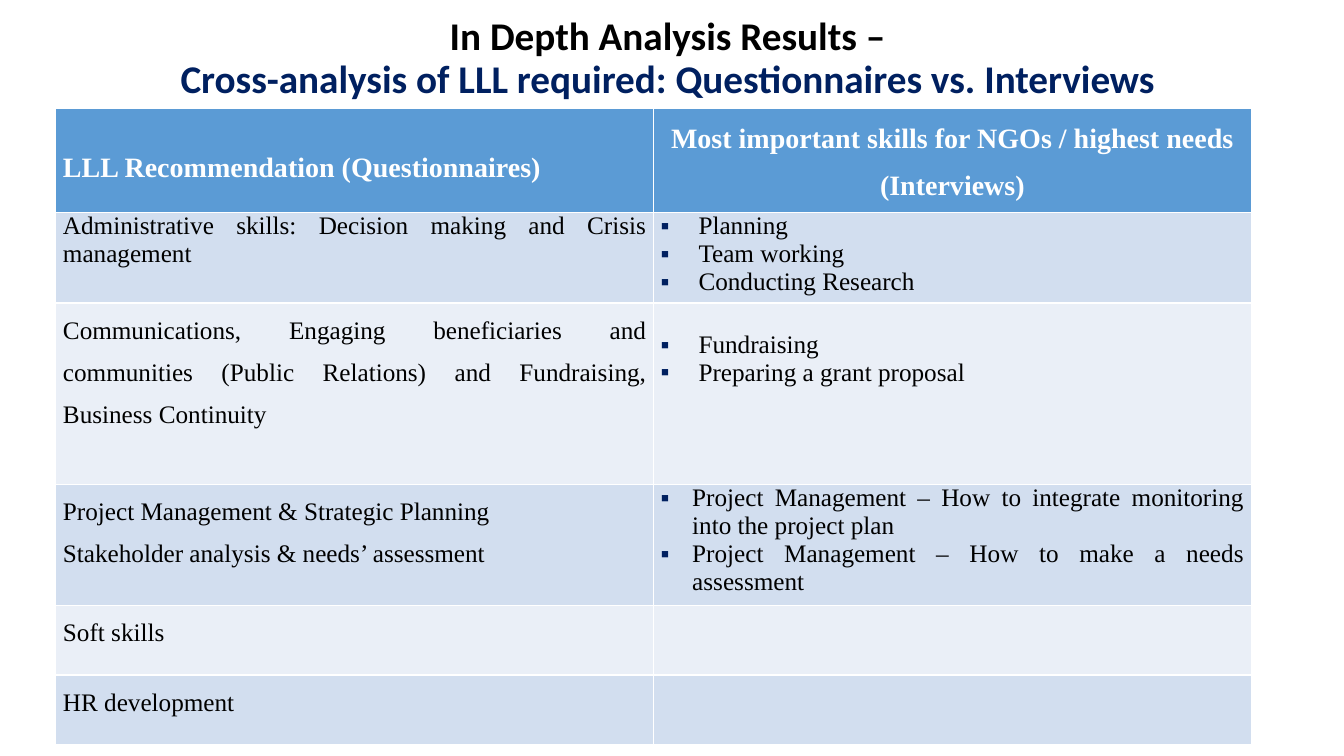
from dataclasses import dataclass

import pptx
import pptx.dml.color
import pptx.enum.text
import pptx.oxml.ns
import pptx.util
from lxml import etree

RGBColor = pptx.dml.color.RGBColor
Align = pptx.enum.text.PP_ALIGN
Anchor = pptx.enum.text.MSO_ANCHOR

BLACK = RGBColor(0x00, 0x00, 0x00)
WHITE = RGBColor(0xFF, 0xFF, 0xFF)
NAVY = RGBColor(0x00, 0x20, 0x60)
HEADER_BLUE = RGBColor(0x5B, 0x9B, 0xD5)
BANDS = (RGBColor(0xD2, 0xDE, 0xEF), RGBColor(0xEA, 0xEF, 0xF7))

# The slide is a grid of 160 columns by 90 rows, twelve to the inch
UNIT = pptx.util.Inches(1) / 12
SLIDE_COLUMNS, SLIDE_ROWS = 160, 90

TITLE_FORMAT = {"name": "Calibri", "size": pptx.util.Pt(28), "bold": True}
HEADER_FORMAT = {"name": "Times New Roman", "size": pptx.util.Pt(20), "bold": True}
BODY_FORMAT = {"name": "Times New Roman", "size": pptx.util.Pt(18), "bold": False}


def grid(units: float) -> int:
    return pptx.util.Emu(round(units * UNIT))


@dataclass(frozen=True)
class CellText:
    lines: tuple[str, ...] = ()
    line_spacing: float = 1.0
    alignment: Align = Align.JUSTIFY
    anchor: Anchor = Anchor.TOP
    bullet_indent: float = 0
    top_margin: float = 0
    space_after: float = 0


@dataclass(frozen=True)
class TableRow:
    height: float
    needs: CellText
    skills: CellText = CellText()


COLUMN_WIDTH = 71.16
TABLE_ROWS = (
    TableRow(12.36,
             CellText(("LLL Recommendation (Questionnaires)",), 1.5, anchor=Anchor.MIDDLE),
             CellText(("Most important skills for NGOs / highest needs (Interviews)",),
                      1.5, Align.CENTER)),
    TableRow(10.8,
             CellText(("Administrative skills: Decision making and Crisis management",)),
             CellText(("Planning", "Team working", "Conducting Research"),
                      bullet_indent=4.5, space_after=12)),
    TableRow(21.6,
             CellText(("Communications, Engaging beneficiaries and communities "
                       "(Public Relations) and Fundraising, Business Continuity",), 1.5),
             CellText(("Fundraising", "Preparing a grant proposal"),
                      bullet_indent=4.5, top_margin=3.3)),
    TableRow(14.4,
             CellText(("Project Management & Strategic Planning",
                       "Stakeholder analysis & needs’ assessment"), 1.5),
             CellText(("Project Management – How to integrate monitoring into the project plan",
                       "Project Management – How to make a needs assessment"),
                      bullet_indent=3.75)),
    TableRow(8.28, CellText(("Soft skills",), 1.5)),
    TableRow(8.28, CellText(("HR development",), 1.5)),
)


def add_run(paragraph, text: str, font_format: dict, color: RGBColor) -> None:
    run = paragraph.add_run()
    run.text = text
    for name, value in font_format.items():
        setattr(run.font, name, value)
    run.font.color.rgb = color


def add_bullet(paragraph, indent: float) -> None:
    properties = paragraph._p.get_or_add_pPr()
    properties.set("marL", str(grid(indent)))
    properties.set("indent", str(-grid(indent)))
    qualified = pptx.oxml.ns.qn
    bullet_color = etree.SubElement(properties, qualified("a:buClr"))
    etree.SubElement(bullet_color, qualified("a:srgbClr"), val=str(NAVY))
    etree.SubElement(properties, qualified("a:buFont"), typeface="Times New Roman")
    etree.SubElement(properties, qualified("a:buChar"), char="▪")


def add_title(slide) -> None:
    shape = slide.shapes.add_textbox(grid(11), grid(1.1), grid(138), grid(11.9))
    frame = shape.text_frame
    frame.word_wrap = True
    frame.vertical_anchor = Anchor.MIDDLE
    paragraph = frame.paragraphs[0]
    paragraph.alignment = Align.CENTER
    paragraph.line_spacing = 0.9
    add_run(paragraph, "In Depth Analysis Results – ", TITLE_FORMAT, BLACK)
    paragraph.add_line_break()
    add_run(paragraph, "Cross-analysis of LLL required: Questionnaires vs. Interviews ",
            TITLE_FORMAT, NAVY)


def fill_cell(cell, content: CellText, fill: RGBColor, font_format: dict,
              color: RGBColor) -> None:
    cell.fill.solid()
    cell.fill.fore_color.rgb = fill
    cell_format = {"margin_left": grid(0.85), "margin_right": grid(0.85),
                   "margin_top": grid(content.top_margin), "margin_bottom": 0,
                   "vertical_anchor": content.anchor}
    for name, value in cell_format.items():
        setattr(cell, name, value)
    frame = cell.text_frame
    for index, line in enumerate(content.lines):
        paragraph = frame.add_paragraph() if index else frame.paragraphs[0]
        paragraph.alignment = content.alignment
        paragraph.line_spacing = content.line_spacing
        if content.space_after and line == content.lines[-1]:
            paragraph.space_after = pptx.util.Pt(content.space_after)
        if content.bullet_indent:
            add_bullet(paragraph, content.bullet_indent)
        add_run(paragraph, line, font_format, color)


def add_comparison_table(slide) -> None:
    height = sum(row.height for row in TABLE_ROWS)
    table = slide.shapes.add_table(len(TABLE_ROWS), 2, grid(6.65), grid(12.9),
                                   grid(2 * COLUMN_WIDTH), grid(height)).table
    for column in table.columns:
        column.width = grid(COLUMN_WIDTH)
    for index, row in enumerate(TABLE_ROWS):
        table.rows[index].height = grid(row.height)
        if index == 0:
            style = (HEADER_BLUE, HEADER_FORMAT, WHITE)
        else:
            style = (BANDS[(index - 1) % 2], BODY_FORMAT, BLACK)
        for column_index, content in enumerate((row.needs, row.skills)):
            fill_cell(table.cell(index, column_index), content, *style)


def main() -> None:
    presentation = pptx.Presentation()
    presentation.slide_width = grid(SLIDE_COLUMNS)
    presentation.slide_height = grid(SLIDE_ROWS)
    slide = presentation.slides.add_slide(presentation.slide_layouts[6])
    add_title(slide)
    add_comparison_table(slide)
    presentation.save("out.pptx")


if __name__ == "__main__":
    main()
